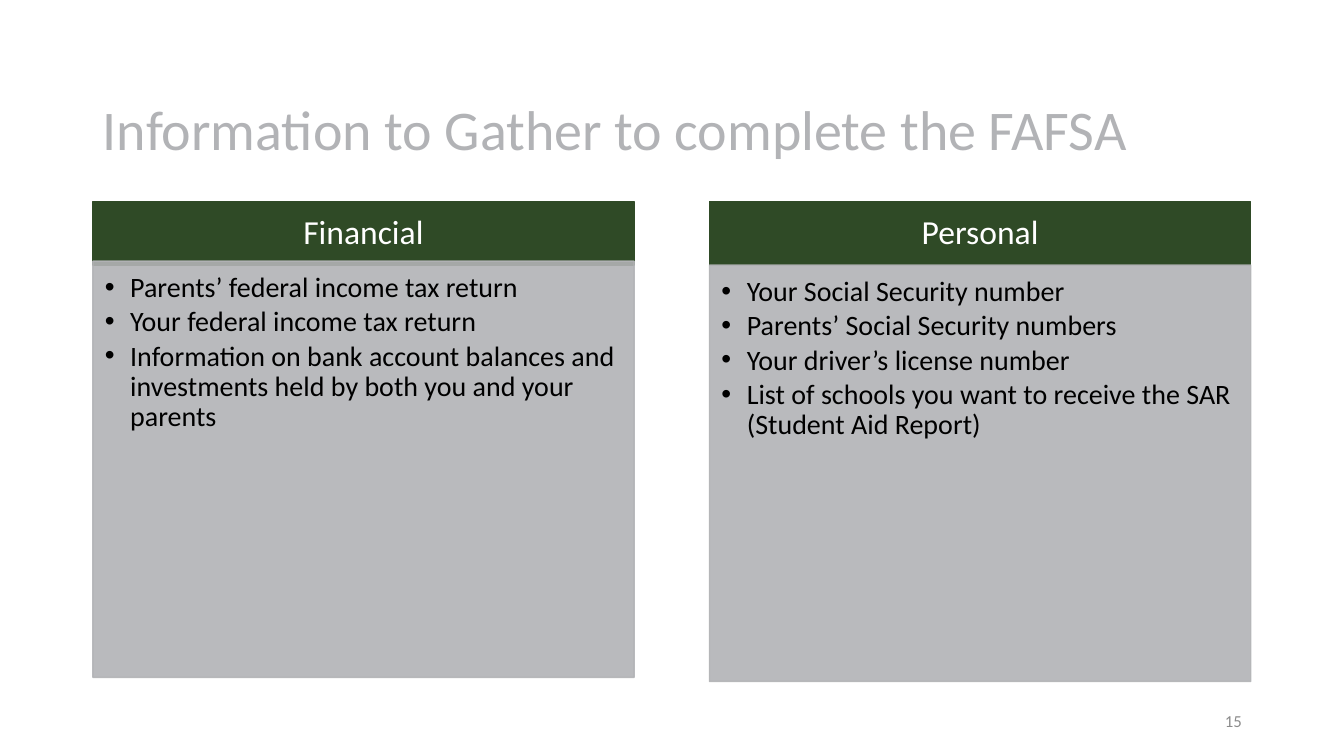
from dataclasses import dataclass
from typing import Any

from lxml.etree import SubElement
from pptx import Presentation
from pptx.dml.color import RGBColor
from pptx.enum.text import MSO_ANCHOR, MSO_AUTO_SIZE, PP_ALIGN
from pptx.oxml.ns import qn
from pptx.util import Cm, Pt

GREEN = "2F4A26"
GREY = "B2B3B6"
COLUMN_WIDTH = 13.64
HEADING_TOP = 5.08
HEADING_HEIGHT = 1.6
LIST_HEIGHT = 10.49


@dataclass
class Column:
    heading: str
    items: list[str]
    left: float
    list_top: float
    heading_index: int
    list_index: int


@dataclass
class TextStyle:
    size: float
    color: str
    frame: dict[str, Any]
    para: dict[str, Any]


COLUMNS = [
    Column("Financial", [
        "Parents’ federal income tax return",
        "Your federal income tax return",
        "Information on bank account balances and investments held by both you and your parents",
    ], 2.34, 6.58, 1, 2),
    Column("Personal", [
        "Your Social Security number",
        "Parents’ Social Security numbers",
        "Your driver’s license number",
        "List of schools you want to receive the SAR (Student Aid Report)",
    ], 17.88, 6.68, 3, 4),
]

TITLE_STYLE = TextStyle(
    40, GREY,
    {"vertical_anchor": MSO_ANCHOR.BOTTOM},
    {"alignment": PP_ALIGN.LEFT, "line_spacing": 0.9},
)
HEADING_STYLE = TextStyle(
    24, "FFFFFF",
    {"vertical_anchor": MSO_ANCHOR.MIDDLE, "margin_left": Cm(0.48), "margin_right": Cm(0.48),
     "margin_top": Cm(0.28), "margin_bottom": Cm(0.28)},
    {"alignment": PP_ALIGN.CENTER, "line_spacing": 0.9, "space_before": Pt(0)},
)
LIST_STYLE = TextStyle(
    20, "000000",
    {"vertical_anchor": MSO_ANCHOR.TOP, "margin_left": Cm(0.3), "margin_right": Cm(0.41),
     "margin_top": Cm(0.3), "margin_bottom": Cm(0.43)},
    {"alignment": PP_ALIGN.LEFT, "line_spacing": 0.9, "space_before": Pt(0), "space_after": Pt(3)},
)
NUMBER_STYLE = TextStyle(
    12, "8C8C8C",
    {"vertical_anchor": MSO_ANCHOR.MIDDLE},
    {"alignment": PP_ALIGN.RIGHT},
)


def hex_color(value: str) -> RGBColor:
    return RGBColor.from_string(value)


def apply_format(target: Any, values: dict[str, Any]) -> None:
    for name, value in values.items():
        setattr(target, name, value)


def place(box: Any, left: float, top: float, width: float, height: float) -> None:
    apply_format(box, {"left": Cm(left), "top": Cm(top), "width": Cm(width), "height": Cm(height)})


def write(box: Any, lines: list[str], style: TextStyle) -> None:
    frame = box.text_frame
    frame.text = "\n".join(lines)
    apply_format(frame, {"word_wrap": True, "auto_size": MSO_AUTO_SIZE.NONE, **style.frame})
    for para in frame.paragraphs:
        apply_format(para, style.para)
        for span in para.runs:
            apply_format(span.font, {"name": "Calibri", "size": Pt(style.size), "bold": False})
            span.font.color.rgb = hex_color(style.color)


def paint(box: Any, color: str, opacity: int = 100) -> None:
    box.fill.solid()
    box.fill.fore_color.rgb = hex_color(color)
    box.line.color.rgb = hex_color(color)
    box.line.width = Pt(1)
    if opacity < 100:
        for tint in box._element.spPr.iter(qn("a:srgbClr")):
            SubElement(tint, qn("a:alpha"), val=str(opacity * 1000))


def hang_bullets(box: Any, indent: float) -> None:
    for para in box.text_frame.paragraphs:
        properties = para._p.get_or_add_pPr()
        properties.set("marL", str(Cm(indent)))
        properties.set("indent", str(-Cm(indent)))


def draw_column(page: Any, column: Column) -> None:
    boxes = {box.placeholder_format.idx: box for box in page.placeholders}
    heading = boxes[column.heading_index]
    place(heading, column.left, HEADING_TOP, COLUMN_WIDTH, HEADING_HEIGHT)
    paint(heading, GREEN)
    write(heading, [column.heading], HEADING_STYLE)

    listing = boxes[column.list_index]
    place(listing, column.left, column.list_top, COLUMN_WIDTH, LIST_HEIGHT)
    paint(listing, GREY, 90)
    write(listing, column.items, LIST_STYLE)
    hang_bullets(listing, 0.64)


def main() -> None:
    deck = Presentation()
    apply_format(deck, {"slide_width": Cm(33.87), "slide_height": Cm(19.05)})
    page = deck.slides.add_slide(deck.slide_layouts.get_by_name("Comparison"))

    title = page.shapes.title
    place(title, 2.34, 1.73, 28.47, 2.49)
    write(title, ["Information to Gather to complete the FAFSA"], TITLE_STYLE)

    for column in COLUMNS:
        draw_column(page, column)

    number = page.shapes.add_textbox(Cm(23.93), Cm(17.65), Cm(7.62), Cm(1.02))
    write(number, ["15"], NUMBER_STYLE)
    deck.save("out.pptx")


if __name__ == "__main__":
    main()
